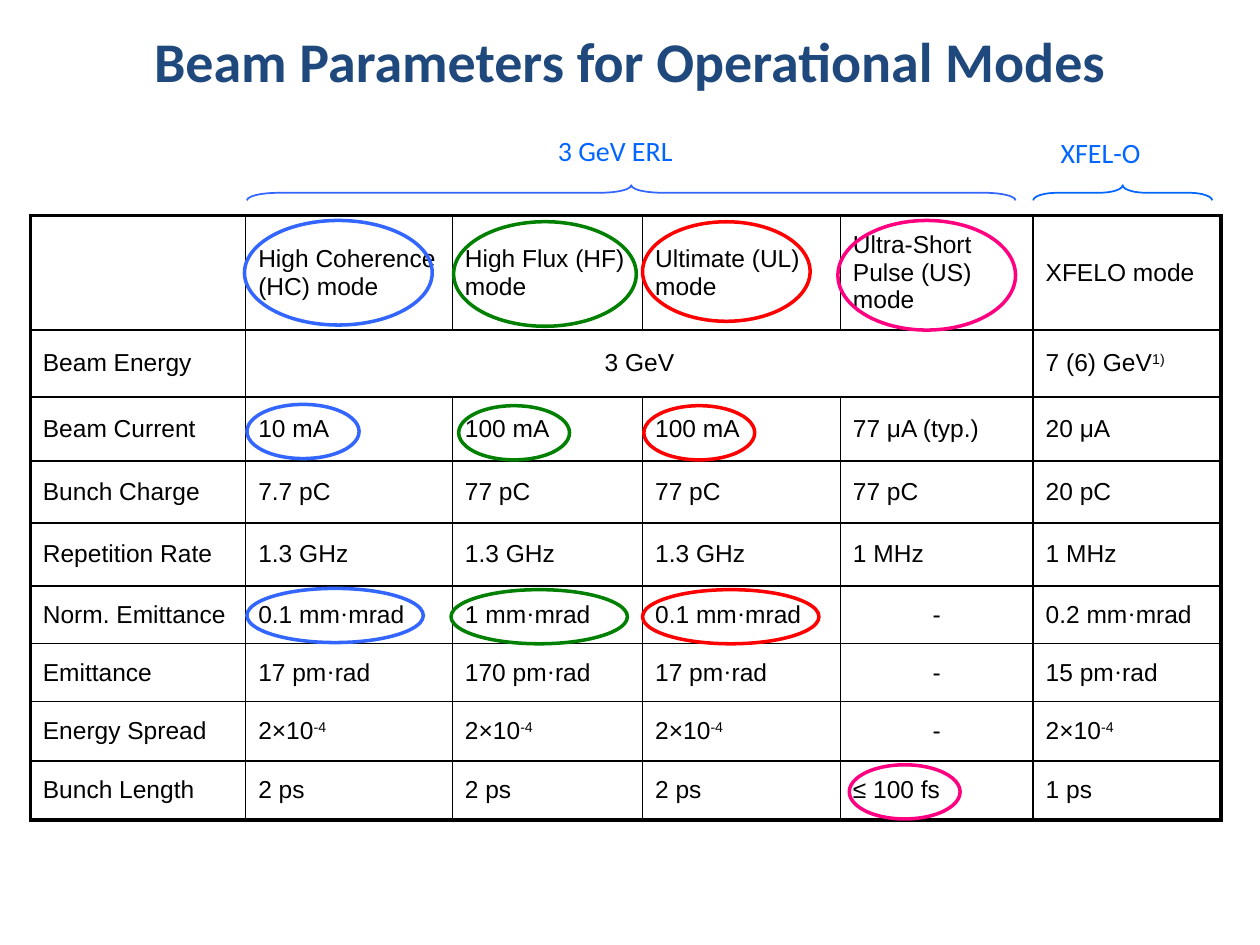
"""Build the slide on beam parameters for operational modes."""
from dataclasses import dataclass

import pptx
import pptx.dml.color
import pptx.enum.shapes
import pptx.enum.text
import pptx.oxml
import pptx.oxml.ns
import pptx.util

Inches, Pt = pptx.util.Inches, pptx.util.Pt
MSO_SHAPE = pptx.enum.shapes.MSO_SHAPE
ALIGN = pptx.enum.text.PP_ALIGN
MIDDLE = pptx.enum.text.MSO_ANCHOR.MIDDLE

COLORS = {"title": "1F497D", "text": "000000", "label": "0066FF", "HC": "3366FF",
          "HF": "008000", "UL": "FF0000", "US": "FF0080"}
LEFT, TOP = 0.24, 1.71
COLS = [1.71, 1.64, 1.51, 1.57, 1.53, 1.49]
ROWS = [0.91, 0.53, 0.51, 0.49, 0.5, 0.46, 0.46, 0.47, 0.47]
THIN, THICK = 1, 2.25
CELLS = [
    ["", "High Coherence (HC) mode", "High Flux (HF) mode", "Ultimate (UL) mode",
     "Ultra-Short Pulse (US) mode", "XFELO mode"],
    ["Beam Energy", "3 GeV", "", "", "", "7 (6) GeV^1)"],
    ["Beam Current", "10 mA", "100 mA", "100 mA", "77 μA (typ.)", "20 μA"],
    ["Bunch Charge", "7.7 pC", "77 pC", "77 pC", "77 pC", "20 pC"],
    ["Repetition Rate", "1.3 GHz", "1.3 GHz", "1.3 GHz", "1 MHz", "1 MHz"],
    ["Norm. Emittance", "0.1 mm·mrad", "1 mm·mrad", "0.1 mm·mrad", "-", "0.2 mm·mrad"],
    ["Emittance", "17 pm·rad", "170 pm·rad", "17 pm·rad", "-", "15 pm·rad"],
    ["Energy Spread", "2×10^-4", "2×10^-4", "2×10^-4", "-", "2×10^-4"],
    ["Bunch Length", "2 ps", "2 ps", "2 ps", "≤ 100 fs", "1 ps"],
]
CENTERED = {"3 GeV", "-"}


@dataclass
class Ring:
    """An ellipse offset from the corner of its table cell."""
    row: int
    dx: float
    dy: float
    w: float = 0.88
    h: float = 0.43


@dataclass
class Mode:
    """An operational mode with the rings that mark its column."""
    name: str
    col: int
    rings: list[Ring]


@dataclass
class Span:
    """A brace and the label above it."""
    text: str
    label: tuple[float, float, float]
    center: float
    length: float
    curve: float
    color: str


MODES = [
    Mode("US", 4, [Ring(8, 0.07, 0.03), Ring(0, -0.02, 0.04, 1.41, 0.87)]),
    Mode("UL", 3, [Ring(0, 0, 0.05, 1.33, 0.79), Ring(2, 0.01, 0.07), Ring(5, 0, 0.03, 1.4)]),
    Mode("HF", 2, [Ring(0, 0.01, 0.05, 1.45, 0.83), Ring(2, 0.05, 0.07),
                   Ring(5, -0.01, 0.03, 1.4)]),
    Mode("HC", 1, [Ring(0, -0.01, 0.04, 1.49, 0.83), Ring(2, 0.01, 0.06, 0.89),
                   Ring(5, 0.01, 0.02, 1.4)]),
]
SPANS = [
    Span("3 GeV ERL", (4.33, 1.01, 1.57), 5.01, 6.1, 2.08, "HC"),
    Span("XFEL-O", (8.32, 1.03, 1.13), 8.91, 1.42, 1.57, "label"),
]
BRACE_Y, BRACE_DEPTH = 1.53, 0.12


def rgb(name: str) -> pptx.dml.color.RGBColor:
    """Look up a named colour."""
    return pptx.dml.color.RGBColor.from_string(COLORS[name])


def add_run(p, text: str, size: float, color: str, face: str):
    """Append a formatted run to a paragraph."""
    r = p.add_run()
    r.text = text
    r.font.size, r.font.name = Pt(size), face
    r.font.color.rgb = rgb(color)
    return r


def add_value(p, text: str) -> None:
    """Write a cell value, with ^ before a superscript."""
    base, _, power = text.partition("^")
    head, dot, tail = base.partition("·")
    for part, face in ((head, "Arial"), (dot, "Times New Roman"), (tail, "Arial")):
        if part:
            add_run(p, part, 14, "text", face)
    if power:
        r = add_run(p, power, 14, "text", "Arial")
        r.font._element.set("baseline", "30000")


def set_border(cell, side: str, width: float) -> None:
    """Draw one side of a cell."""
    cell._tc.get_or_add_tcPr().append(pptx.oxml.parse_xml(
        f'<a:ln{side} {pptx.oxml.ns.nsdecls("a")} w="{Pt(width)}"><a:solidFill>'
        f'<a:srgbClr val="{COLORS["text"]}"/></a:solidFill></a:ln{side}>'))


def add_grid(shapes) -> None:
    """Add the parameter table."""
    table = shapes.add_table(len(ROWS), len(COLS), Inches(LEFT), Inches(TOP),
                             Inches(sum(COLS)), Inches(sum(ROWS))).table
    table.first_row = table.horz_banding = False
    for col, width in zip(table.columns, COLS):
        col.width = Inches(width)
    for row, height in zip(table.rows, ROWS):
        row.height = Inches(height)
    for i, values in enumerate(CELLS):
        for j, text in enumerate(values):
            cell = table.cell(i, j)
            edges = {"L": j == 0, "R": j == len(COLS) - 1,
                     "T": i == 0, "B": i == len(ROWS) - 1}
            for side, outer in edges.items():
                set_border(cell, side, THICK if outer else THIN)
            cell.fill.background()
            cell.vertical_anchor = MIDDLE
            p = cell.text_frame.paragraphs[0]
            p.alignment = ALIGN.CENTER if text in CENTERED else ALIGN.LEFT
            add_value(p, text)
    table.cell(1, 1).merge(table.cell(1, 4))


def add_outline(shapes, kind, box: tuple, color: str, width: float):
    """Add an unfilled preset shape."""
    sp = shapes.add_shape(kind, *map(Inches, box))
    sp.shadow.inherit = False
    sp.fill.background()
    sp.line.color.rgb = rgb(color)
    sp.line.width = Pt(width)
    return sp


def add_span(shapes, span: Span) -> None:
    """Add a brace lying on its side and its label."""
    box = (span.center - BRACE_DEPTH / 2, BRACE_Y - span.length / 2, BRACE_DEPTH, span.length)
    sp = add_outline(shapes, MSO_SHAPE.LEFT_BRACE, box, span.color, 1)
    sp.rotation = 90
    sp.adjustments[0] = span.curve
    tf = shapes.add_textbox(*map(Inches, (*span.label, 0.37))).text_frame
    tf.word_wrap = True
    add_run(tf.paragraphs[0], span.text, 16, "label", "Calibri")


def add_mode(shapes, mode: Mode) -> None:
    """Add the rings of one mode as a group."""
    group = shapes.add_group_shape()
    x = LEFT + sum(COLS[:mode.col])
    for ring in mode.rings:
        y = TOP + sum(ROWS[:ring.row])
        add_outline(group.shapes, MSO_SHAPE.OVAL,
                    (x + ring.dx, y + ring.dy, ring.w, ring.h), mode.name, 2)


def add_title(slide, text: str) -> None:
    """Place and format the title."""
    s = slide.shapes.title
    s.left, s.top, s.width, s.height = map(Inches, (0.5, 0.13, 9, 0.69))
    tf = s.text_frame
    tf.auto_size = pptx.enum.text.MSO_AUTO_SIZE.NONE
    tf.word_wrap = False
    tf.vertical_anchor = MIDDLE
    p = tf.paragraphs[0]
    p.alignment = ALIGN.CENTER
    add_run(p, text, 32, "title", "Calibri").font.bold = True


def main() -> None:
    """Build and save the slide."""
    prs = pptx.Presentation()
    prs.slide_width, prs.slide_height = Inches(10), Inches(7.5)
    slide = prs.slides.add_slide(prs.slide_layouts[5])
    add_title(slide, "Beam Parameters for Operational Modes")
    add_grid(slide.shapes)
    for span in SPANS:
        add_span(slide.shapes, span)
    for mode in MODES:
        add_mode(slide.shapes, mode)
    prs.save("out.pptx")


if __name__ == "__main__":
    main()
